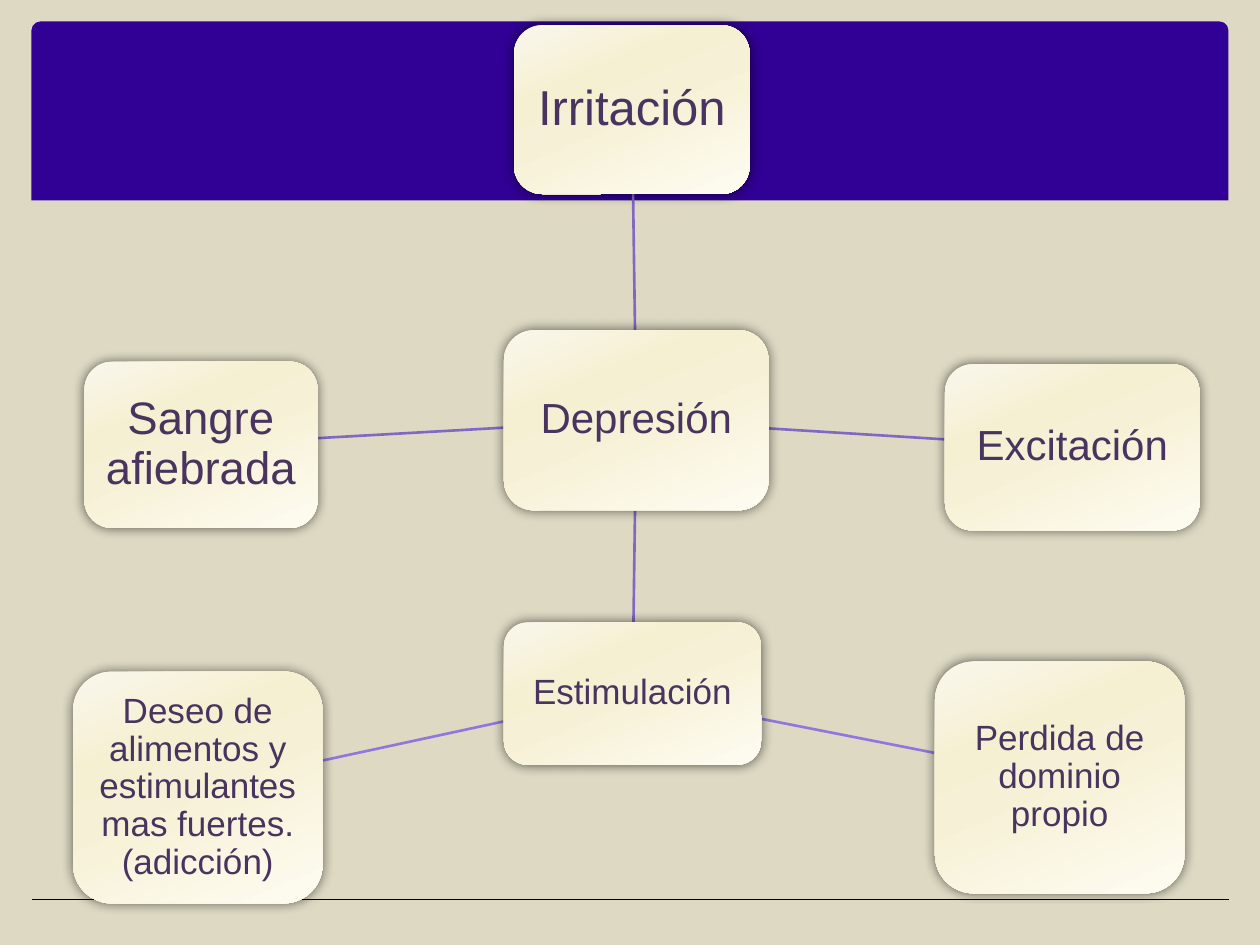
from copy import deepcopy

from lxml.etree import SubElement
from pptx import Presentation
from pptx.dml.color import RGBColor
from pptx.enum.shapes import MSO_CONNECTOR, MSO_SHAPE
from pptx.enum.text import MSO_ANCHOR, PP_ALIGN
from pptx.oxml.ns import qn
from pptx.util import Inches, Pt

COLORS = {
    "background": "DDD9C3", "band": "310095", "rule": "000000",
    "text": "49345F", "shadow": "000000",
    "main_link": "8068C4", "outer_link": "9176DE",
}
NODE_GRADIENT = [(0, "F9F7EC"), (0.3, "F6F0D3"), (0.5, "F6F1D6"), (1, "FEFCF2")]

# Text: (box as left, top, width, height; font size; text inset)
NODES = {
    "Depresión": ((4, 2.62, 2.1, 1.43), 24, 0.07),
    "Irritación": ((4.08, 0.2, 1.87, 1.34), 28, 0.08),
    "Excitación": ((7.5, 2.89, 2.02, 1.32), 24, 0.07),
    "Estimulación": ((4, 4.94, 2.04, 1.13), 20, 0.06),
    "Perdida de dominio propio": ((7.42, 5.25, 1.98, 1.84), 20, 0.06),
    "Deseo de alimentos y estimulantes mas fuertes. (adicción)":
        ((0.58, 5.33, 1.98, 1.84), 20, 0.06),
    "Sangre afiebrada": ((0.67, 2.87, 1.85, 1.32), 26, 0.07),
}
LINKS = [
    ("Depresión", "Sangre afiebrada", "main_link"),
    ("Depresión", "Estimulación", "main_link"),
    ("Depresión", "Excitación", "main_link"),
    ("Depresión", "Irritación", "main_link"),
    ("Estimulación", "Perdida de dominio propio", "outer_link"),
    ("Estimulación", "Deseo de alimentos y estimulantes mas fuertes. (adicción)",
     "outer_link"),
]


def rgb(name):
    return RGBColor.from_string(COLORS[name])


def center(box):
    left, top, width, height = box
    return left + width / 2, top + height / 2


def edge_toward(box, other):
    """Point where the line between two box centers leaves the first box."""
    (x, y), (other_x, other_y) = center(box), center(other)
    dx, dy = other_x - x, other_y - y
    share = min(half / abs(delta) for half, delta in
                ((box[2] / 2, dx), (box[3] / 2, dy)) if delta)
    return x + dx * share, y + dy * share


def add_line(slide, start, end, color, width):
    line = slide.shapes.add_connector(
        MSO_CONNECTOR.STRAIGHT, *map(Inches, (*start, *end)))
    line.line.color.rgb = rgb(color)
    line.line.width = Pt(width)
    SubElement(line._element.spPr, qn("a:effectLst"))


def add_frame(slide, box):
    """Header band and footer rule."""
    left, top, width, height = box
    band = slide.shapes.add_shape(
        MSO_SHAPE.ROUND_2_SAME_RECTANGLE, *map(Inches, (left, top, width, 1.42)))
    band.adjustments[0] = 0.05
    band.shadow.inherit = False
    band.fill.solid()
    band.fill.fore_color.rgb = rgb("band")
    band.line.fill.background()
    bottom = top + height
    add_line(slide, (left, bottom), (left + width, bottom), "rule", 1)


def fill_node(node):
    node.fill.gradient()
    stop_list = node._element.spPr.find(qn("a:gradFill")).find(qn("a:gsLst"))
    for stop in list(stop_list):
        stop_list.append(deepcopy(stop))
    for stop, (position, color) in zip(node.fill.gradient_stops, NODE_GRADIENT):
        stop.position = position
        stop.color.rgb = RGBColor.from_string(color)
    node.fill.gradient_angle = 360 - 67
    node.line.fill.background()


def add_glow_shadow(node):
    node.shadow.inherit = False
    effects = node._element.spPr.find(qn("a:effectLst"))
    shadow = SubElement(effects, qn("a:outerShdw"), blurRad=str(Pt(7.1)),
                        dist="0", dir="0", rotWithShape="0")
    color = SubElement(shadow, qn("a:srgbClr"), val=COLORS["shadow"])
    SubElement(color, qn("a:alpha"), val="60000")


def add_node(slide, text, box, size, inset):
    node = slide.shapes.add_shape(MSO_SHAPE.ROUNDED_RECTANGLE, *map(Inches, box))
    fill_node(node)
    add_glow_shadow(node)
    frame = node.text_frame
    frame.text = text
    frame.word_wrap = True
    frame.vertical_anchor = MSO_ANCHOR.MIDDLE
    frame.margin_left = frame.margin_right = Inches(inset)
    frame.margin_top = frame.margin_bottom = Inches(inset)
    paragraph = frame.paragraphs[0]
    paragraph.alignment = PP_ALIGN.CENTER
    paragraph.line_spacing = 0.9
    font = paragraph.runs[0].font
    font.name, font.size = "Arial", Pt(size)
    font.color.rgb = rgb("text")


def add_diagram(slide):
    """Links first, so that the nodes lie over them."""
    for source, target, color in LINKS:
        start, end = NODES[source][0], NODES[target][0]
        add_line(slide, edge_toward(start, end), edge_toward(end, start), color, 1.5)
    for text, (box, size, inset) in NODES.items():
        add_node(slide, text, box, size, inset)


def main():
    presentation = Presentation()
    presentation.slide_width = Inches(10)
    presentation.slide_height = Inches(7.5)
    slide = presentation.slides.add_slide(presentation.slide_layouts[6])
    slide.background.fill.solid()
    slide.background.fill.fore_color.rgb = rgb("background")
    add_frame(slide, (0.25, 0.17, 9.5, 6.97))
    add_diagram(slide)
    presentation.save("out.pptx")


if __name__ == "__main__":
    main()
